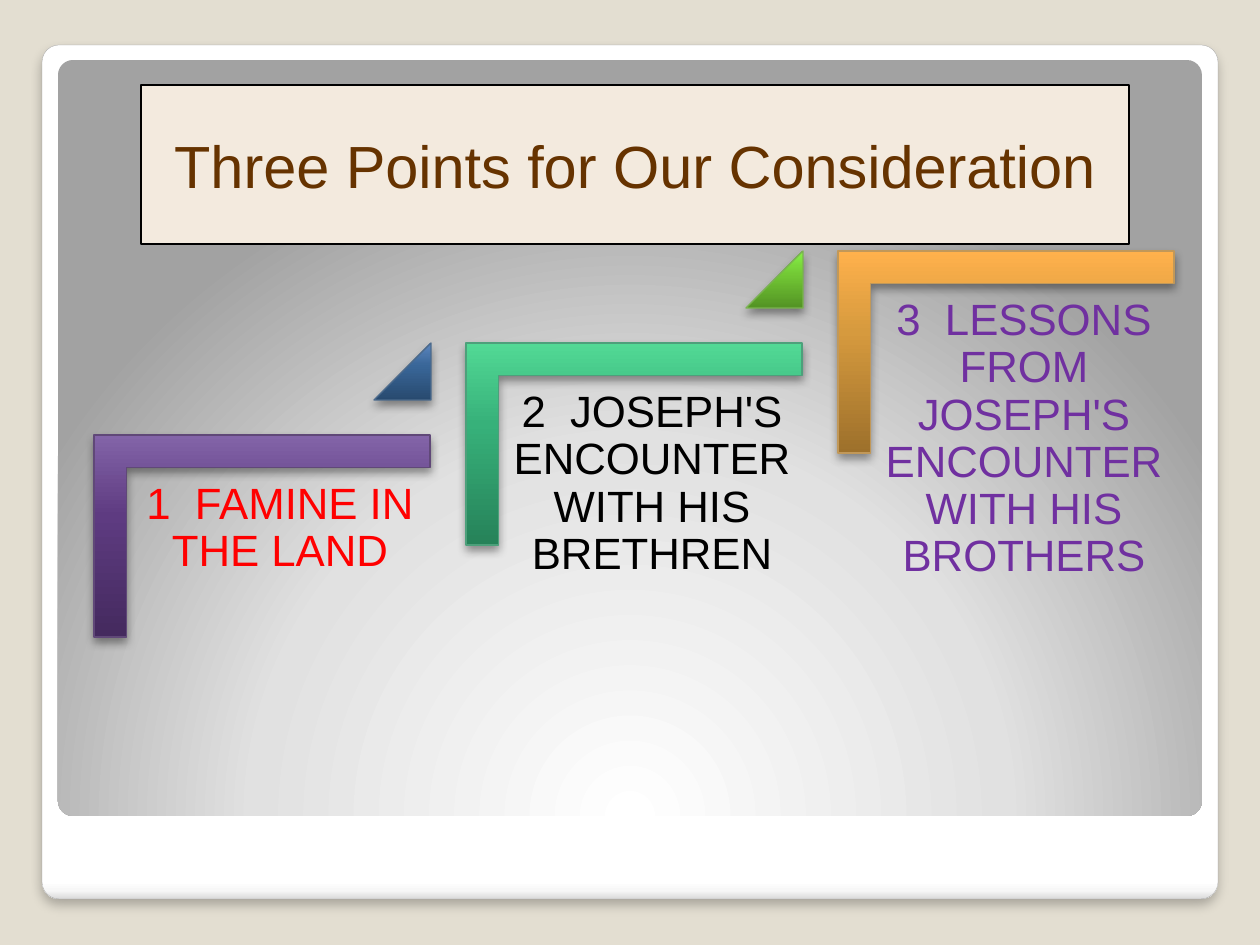
from dataclasses import dataclass

from lxml.etree import SubElement
from pptx import Presentation
from pptx.dml.color import RGBColor
from pptx.enum.shapes import MSO_SHAPE
from pptx.enum.text import MSO_ANCHOR, PP_ALIGN
from pptx.oxml.ns import qn
from pptx.util import Emu, Pt

DPI = 126
STEP_X, STEP_Y = 372, -92
ARM_W, ARM_H = 336, 202
Stops = list[tuple[int, str]]


@dataclass
class Shade:
    stops: Stops
    angle: int | None = None  # None means a circle centred below the middle


@dataclass
class Shadow:
    alpha: int
    blur: float
    dist: int


@dataclass
class Tone:
    dark: str
    mid: str
    light: str
    line: str

    def shade(self) -> Shade:
        return Shade([(0, self.dark), (60, self.mid), (100, self.light)], 270)


@dataclass
class Point:
    text: str
    color: str
    tone: Tone
    wedge: Tone | None = None


PANEL = Shade([(0, "FFFFFF"), (98, "FFFFFF"), (99, "F7F7F7"), (100, "DADADA")], 90)
GLOW = Shade([(0, "FFFFFF"), (55, "E1E1E1"), (100, "A2A2A2")])
SOFT, FIRM = Shadow(25, 6, 4), Shadow(40, 5.2, 3)

POINTS = [
    Point("1  FAMINE IN THE LAND", "FF0000",
          Tone("442A5E", "5E3B81", "8364A8", "604878"),
          Tone("284A6F", "396698", "5C86BF", "4B6A8C")),
    Point("2  JOSEPH'S ENCOUNTER WITH HIS BRETHREN", "000000",
          Tone("268259", "37B17A", "52D995", "4DA07B"),
          Tone("539324", "73C935", "87F448", "7AB44F")),
    Point("3  LESSONS FROM JOSEPH'S ENCOUNTER WITH HIS BROTHERS", "7030A0",
          Tone("9D702B", "D69A3E", "FFB14C", "C19859")),
]


def px(size: int) -> Emu:
    return Emu(round(size * 914400 / DPI))


def rgb(color: str) -> RGBColor:
    return RGBColor.from_string(color)


def tag(parent, name: str, **attrs):
    """Add a DrawingML child element."""
    return SubElement(parent, qn(f"a:{name}"), {k: str(v) for k, v in attrs.items()})


def add_shade(shape, shade: Shade) -> None:
    grad = tag(shape._element.spPr, "gradFill", rotWithShape=0)
    stops = tag(grad, "gsLst")
    for pos, color in shade.stops:
        tag(tag(stops, "gs", pos=pos * 1000), "srgbClr", val=color)
    if shade.angle is None:
        ring = tag(grad, "path", path="circle")
        tag(ring, "fillToRect", l=50000, t=175000, r=50000, b=-75000)
    else:
        tag(grad, "lin", ang=shade.angle * 60000, scaled=0)


def add_shadow(shape, shadow: Shadow) -> None:
    effects = shape._element.spPr.find(qn("a:effectLst"))
    outer = tag(effects, "outerShdw", blurRad=int(Pt(shadow.blur)),
                dist=int(Pt(shadow.dist)), dir=90 * 60000, algn="ctr", rotWithShape=0)
    tag(tag(outer, "srgbClr", val="000000"), "alpha", val=shadow.alpha * 1000)


def add_form(slide, kind: MSO_SHAPE, box: tuple[int, int, int, int],
             fill: Shade | str, line: str | None = None, width: float = 0.75,
             shadow: Shadow | None = None, adjust: tuple[float, ...] = ()):
    shape = slide.shapes.add_shape(kind, *map(px, box))
    for i, value in enumerate(adjust):
        shape.adjustments[i] = value
    if isinstance(fill, Shade):
        add_shade(shape, fill)
    else:
        shape.fill.solid()
        shape.fill.fore_color.rgb = rgb(fill)
    if line:
        shape.line.color.rgb = rgb(line)
        shape.line.width = Pt(width)
    else:
        shape.line.fill.background()
    shape.shadow.inherit = False
    if shadow:
        add_shadow(shape, shadow)
    return shape


def write(shape, text: str, size: int, color: str):
    """Put one centred, wrapped paragraph in the shape and return it."""
    shape.text_frame.word_wrap = True
    para = shape.text_frame.paragraphs[0]
    para.text = text
    para.alignment = PP_ALIGN.CENTER
    para.font.name = "Arial"
    para.font.size = Pt(size)
    para.font.color.rgb = rgb(color)
    return para


def add_point(slide, point: Point, x: int, y: int) -> None:
    """Draw a bracket with its top left corner at x, y, then its text and wedge."""
    # The bracket is a corner turned by 90 degrees about its centre.
    turn = (ARM_W - ARM_H) // 2
    arm = add_form(slide, MSO_SHAPE.CORNER, (x + turn, y - turn, ARM_H, ARM_W),
                   point.tone.shade(), point.tone.line, shadow=FIRM,
                   adjust=(0.16, 0.16))
    arm.rotation = 90

    label = slide.shapes.add_textbox(*map(px, (x + 34, y + 34, 304, 266)))
    frame = label.text_frame
    frame.margin_left = frame.margin_right = px(13)
    frame.margin_top = frame.margin_bottom = px(13)
    para = write(label, point.text, 25, point.color)
    para.line_spacing = 0.9
    para.space_after = Pt(9)

    if point.wedge:
        add_form(slide, MSO_SHAPE.ISOSCELES_TRIANGLE, (x + 280, y + STEP_Y, 57, 57),
                 point.wedge.shade(), point.wedge.line, shadow=FIRM, adjust=(1,))


def main() -> None:
    deck = Presentation()
    deck.slide_width, deck.slide_height = px(1260), px(945)
    slide = deck.slides.add_slide(deck.slide_layouts[6])
    slide.background.fill.solid()
    slide.background.fill.fore_color.rgb = rgb("E3DED1")

    add_form(slide, MSO_SHAPE.ROUNDED_RECTANGLE, (42, 45, 1176, 854), PANEL,
             "A4A4A4", 0.16, SOFT, (0.02,))
    add_form(slide, MSO_SHAPE.ROUNDED_RECTANGLE, (58, 60, 1144, 756), GLOW,
             adjust=(0.02,))
    title = add_form(slide, MSO_SHAPE.RECTANGLE, (141, 85, 988, 159), "F3EADE", "000000")
    title.text_frame.vertical_anchor = MSO_ANCHOR.MIDDLE
    write(title, "Three Points for Our Consideration", 34, "663300")

    for i, point in enumerate(POINTS):
        add_point(slide, point, 94 + i * STEP_X, 435 + i * STEP_Y)

    deck.save("out.pptx")


if __name__ == "__main__":
    main()
